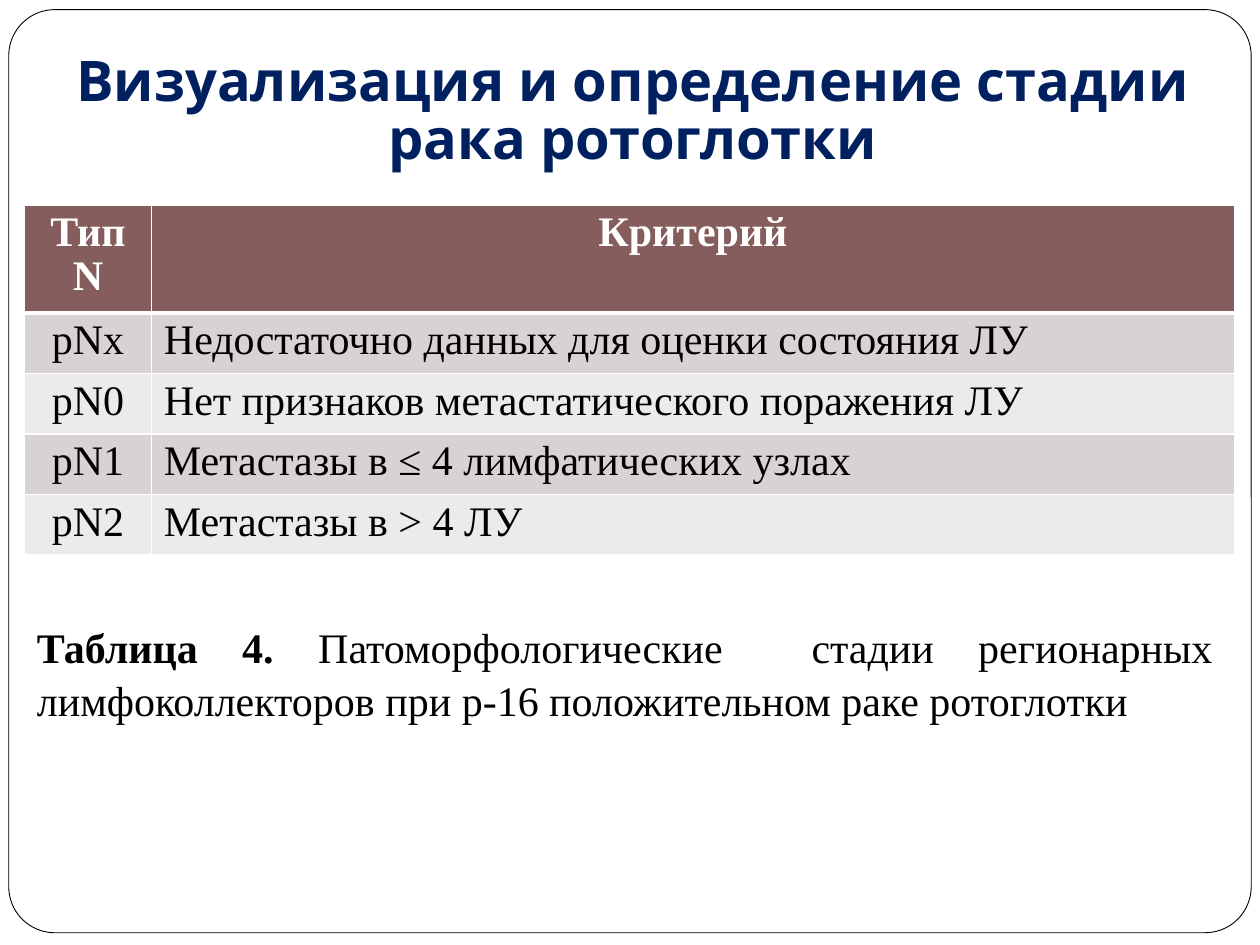
from lxml import etree
from pptx import Presentation
from pptx.dml.color import RGBColor
from pptx.enum.shapes import MSO_SHAPE as Shape
from pptx.enum.text import MSO_ANCHOR as Anchor, PP_ALIGN as Align
from pptx.oxml.ns import qn
from pptx.util import Pt

SERIF = "Times New Roman"
ROWS = [
    ("Тип N", "Критерий"),
    ("pNx", "Недостаточно данных для оценки состояния ЛУ"),
    ("pN0", "Нет признаков метастатического поражения ЛУ"),
    ("pN1", "Метастазы в ≤ 4 лимфатических узлах"),
    ("pN2", "Метастазы в > 4 ЛУ"),
]


def color(value):
    """Turn a hex string into a colour."""
    return RGBColor.from_string(value)


def paint(target, value):
    """Give a shape, cell or line a solid fill."""
    target.fill.solid()
    target.fill.fore_color.rgb = color(value)


def add_span(para, text, value="000000", **formats):
    """Append formatted text to a paragraph."""
    span = para.add_run()
    span.text = text
    span.font.color.rgb = color(value)
    for name, setting in {"name": SERIF, "size": Pt(24), "bold": False, **formats}.items():
        setattr(span.font, name, setting)


def add_text(page, left, top, width, height, spans, align, spacing, **frame):
    """Add a wrapped text box holding one paragraph."""
    box = page.shapes.add_textbox(Pt(left), Pt(top), Pt(width), Pt(height))
    for name, setting in {"word_wrap": True, **frame}.items():
        setattr(box.text_frame, name, setting)
    para = box.text_frame.paragraphs[0]
    para.alignment = align
    para.line_spacing = spacing
    for text, formats in spans:
        add_span(para, text, **formats)


def add_border(cell, side, width):
    """Draw a white border on one side of a cell."""
    line = etree.SubElement(cell._tc.get_or_add_tcPr(), qn(f"a:ln{side}"), w=str(Pt(width)))
    fill = etree.SubElement(line, qn("a:solidFill"))
    etree.SubElement(fill, qn("a:srgbClr"), val="FFFFFF")


def add_frame(page, left, top, width, height):
    """Draw the rounded slide frame."""
    frame = page.shapes.add_shape(Shape.ROUNDED_RECTANGLE, Pt(left), Pt(top), Pt(width), Pt(height))
    frame.adjustments[0] = 0.05
    frame.shadow.inherit = False
    paint(frame, "FFFFFF")
    paint(frame.line, "000000")
    frame.line.width = Pt(0.5)


def add_stages(page, left, top, width, height):
    """Build the table of node stages and criteria."""
    table = page.shapes.add_table(len(ROWS), 2, Pt(left), Pt(top), Pt(width), Pt(height)).table
    type_width = 72.5
    table.columns[0].width = Pt(type_width)
    table.columns[1].width = Pt(width - type_width)
    for i, texts in enumerate(ROWS):
        header = i == 0
        table.rows[i].height = Pt(51 if header else 29.5)
        for j, text in enumerate(texts):
            cell = table.cell(i, j)
            for side in "LRTB":
                thick = (header and side == "B") or (i == 1 and side == "T")
                add_border(cell, side, 3 if thick else 1)
            paint(cell, "855D5D" if header else ("EDEAEA", "D9D2D2")[i % 2])
            para = cell.text_frame.paragraphs[0]
            para.alignment = Align.CENTER if header or j == 0 else Align.LEFT
            para.line_spacing = 0.95
            add_span(para, text, "FFFFFF" if header else "000000", bold=header)


def main():
    """Build and save the slide."""
    deck = Presentation()
    deck.slide_width, deck.slide_height = Pt(720), Pt(540)
    page = deck.slides.add_slide(deck.slide_layouts[6])
    add_frame(page, 5, 5.5, 710, 527.5)
    title = {"value": "002060", "name": "Karla", "size": Pt(32), "bold": True}
    add_text(page, 14, 32, 695, 70,
             [("Визуализация и определение стадии рака ротоглотки", title)],
             Align.CENTER, 0.87, vertical_anchor=Anchor.BOTTOM, margin_bottom=Pt(4))
    add_stages(page, 14, 117, 691.5, 169)
    add_text(page, 14, 350, 686, 54,
             [("Таблица 4. ", {"bold": True}),
              ("Патоморфологические  стадии регионарных лимфоколлекторов "
               "при p-16 положительном раке ротоглотки", {})],
             Align.JUSTIFY, 1.05)
    deck.save("out.pptx")


if __name__ == "__main__":
    main()
